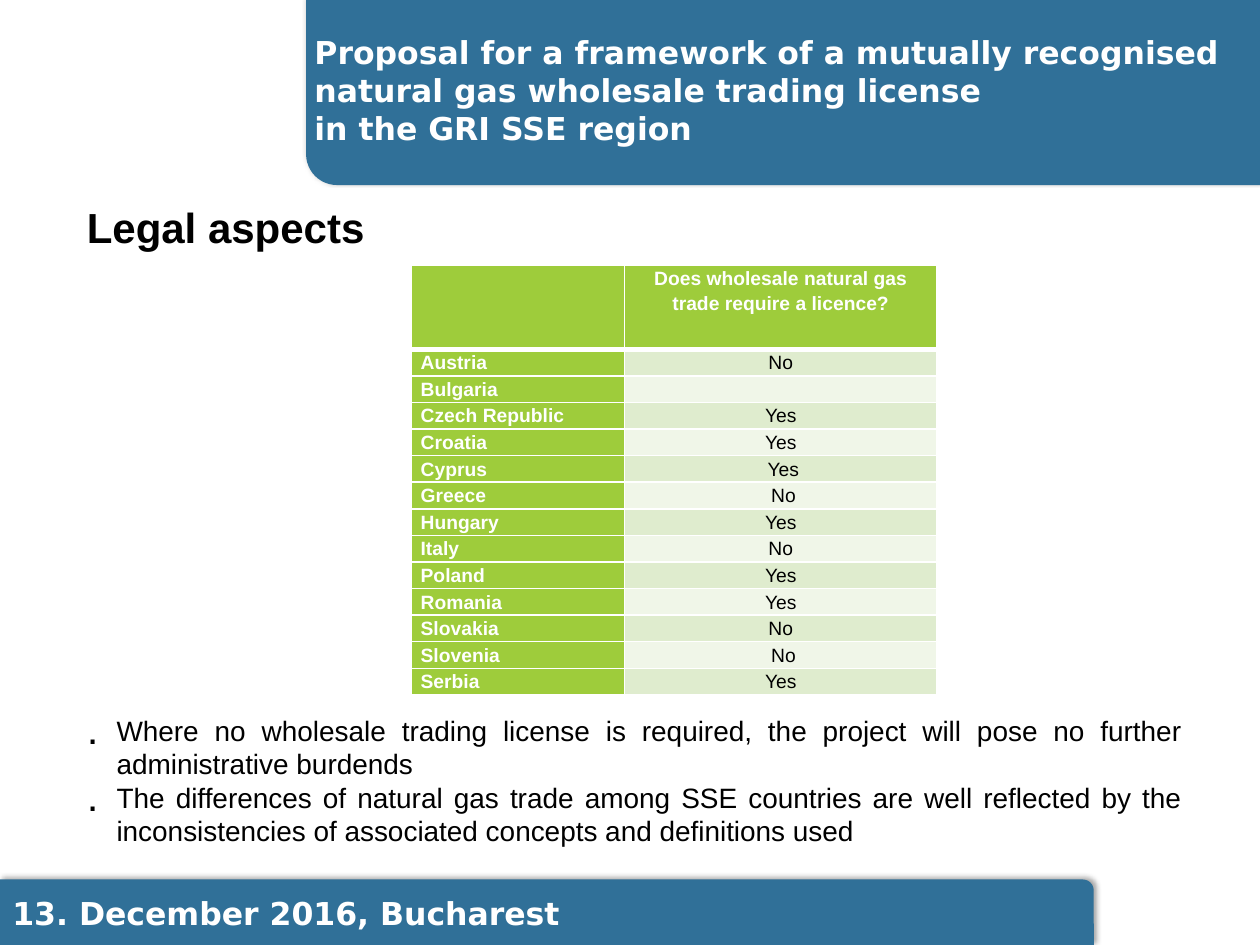
from lxml.etree import SubElement as Sub
from pptx import Presentation as Deck
from pptx.dml.color import RGBColor as Rgb
from pptx.enum.shapes import MSO_SHAPE as Kind
from pptx.enum.text import PP_ALIGN as Align
from pptx.oxml.ns import qn
from pptx.util import Cm, Pt

BLUE, GREEN, WHITE, BLACK = "307098", "9ECC3B", "FFFFFF", "000000"
TINTS = ["DFECCE", "F0F6E8"]
BANNER = dict(name="DejaVu Sans", size=Pt(18), bold=True)
HEADING = dict(name="Arial", size=Pt(24), bold=True)
BODY = dict(name="Arial", size=Pt(16), bold=False)
LABEL = dict(name="Arial", size=Pt(11), bold=True)
VALUE = dict(LABEL, bold=False)

ROWS = [
    ("", "Does wholesale natural gas trade require a licence?"),
    ("Austria", "No"),
    ("Bulgaria", ""),
    ("Czech Republic", "Yes"),
    ("Croatia", "Yes"),
    ("Cyprus", " Yes"),
    ("Greece", " No"),
    ("Hungary", "Yes"),
    ("Italy", "No"),
    ("Poland", "Yes"),
    ("Romania", "Yes"),
    ("Slovakia", "No"),
    ("Slovenia", " No"),
    ("Serbia", "Yes"),
]
POINTS = [
    "Where no wholesale trading license is required, the project will pose "
    "no further administrative burdends",
    "The differences of natural gas trade among SSE countries are well "
    "reflected by the inconsistencies of associated concepts and definitions used",
]


def color(code):
    return Rgb.from_string(code)


def place(box):
    return [Cm(n) for n in box]


def assign(item, values):
    for key, value in values.items():
        setattr(item, key, value)


def node(root, tag, **attrs):
    return Sub(root, qn(tag), **attrs)


def write(para, text, style, ink, **form):
    assign(para, form)
    if not text:
        node(para._p, "a:endParaRPr", sz=str(int(style["size"].pt * 100)))
        return
    para.text = text
    for run in para.runs:
        assign(run.font, style)
        run.font.color.rgb = color(ink)


def add_text(slide, box):
    frame = slide.shapes.add_textbox(*place(box)).text_frame
    frame.word_wrap = True
    return frame


def add_band(slide, box, turn=0):
    band = slide.shapes.add_shape(Kind.ROUND_1_RECTANGLE, *place(box))
    band.rotation = turn
    band.fill.solid()
    band.fill.fore_color.rgb = color(BLUE)
    band.line.fill.background()
    band.shadow.inherit = False
    glow = node(band._element.spPr.find(qn("a:effectLst")), "a:outerShdw",
                blurRad=str(Pt(3.1)), dist=str(Pt(1.8)), dir=str(306 * 60000),
                algn="ctr", rotWithShape="0")
    node(node(glow, "a:srgbClr", val=BLACK), "a:alpha", val="35000")


def add_header(slide, box):
    left, top, width, height = box
    add_band(slide, box, 180)
    frame = add_text(slide, (left - 0.08, top + 0.53, width - 0.23, height - 1.5))
    write(frame.paragraphs[0],
          "Proposal for a framework of a mutually recognised natural gas "
          "wholesale trading license\vin the GRI SSE region",
          BANNER, WHITE, line_spacing=Pt(21.7))


def add_footer(slide, box):
    left, top, width, height = box
    add_band(slide, box)
    frame = add_text(slide, (left, top + 0.17, width - 0.15, height - 0.3))
    write(frame.paragraphs[0], "13. December 2016, Bucharest", BANNER, WHITE)


def add_bullet(para):
    props = para._p.get_or_add_pPr()
    assign_indent = dict(marL=str(Cm(0.6)), indent=str(-Cm(0.6)))
    for key, value in assign_indent.items():
        props.set(key, value)
    node(node(props, "a:buClr"), "a:srgbClr", val=BLACK)
    node(props, "a:buSzPct", val="150000")
    node(props, "a:buFont", typeface="Arial")
    node(props, "a:buChar", char=".")


def add_body(slide, box):
    left, top, width, height = box
    head = add_text(slide, (left, top, width, 1.2))
    write(head.paragraphs[0], "Legal aspects", HEADING, BLACK)
    add_grid(slide, (left + 6.8, top + 1.4, 10.59, 8.59))
    frame = add_text(slide, (left, top + 10.33, width, height - 10.33))
    for i, text in enumerate(POINTS):
        para = frame.add_paragraph() if i else frame.paragraphs[0]
        add_bullet(para)
        write(para, text, BODY, BLACK, alignment=Align.JUSTIFY, line_spacing=Pt(19))


def add_edges(cell, base):
    props = cell._tc.get_or_add_tcPr()
    for side in "LRTB":
        edge = node(props, f"a:ln{side}", w=str(Pt(base if side == "B" else 1)))
        node(node(edge, "a:solidFill"), "a:srgbClr", val=WHITE)


def add_grid(slide, box):
    grid = slide.shapes.add_table(len(ROWS), 2, *place(box)).table
    grid.first_row = grid.horz_banding = False
    for col, width in zip(grid.columns, (4.29, 6.3)):
        col.width = Cm(width)
    for r, row in enumerate(ROWS):
        grid.rows[r].height = Cm(0.53 if r else 1.7)
        for c, text in enumerate(row):
            cell = grid.cell(r, c)
            plain = r > 0 and c > 0
            add_edges(cell, 1 if r else 3)
            assign(cell, dict(margin_left=Cm(0.18), margin_right=Cm(0.18),
                              margin_top=0, margin_bottom=0))
            cell.fill.solid()
            cell.fill.fore_color.rgb = color(TINTS[(r - 1) % 2] if plain else GREEN)
            write(cell.text_frame.paragraphs[0], text,
                  VALUE if plain else LABEL, BLACK if plain else WHITE,
                  alignment=Align.CENTER if c else Align.LEFT, line_spacing=1.15)


def main():
    deck = Deck()
    deck.slide_width, deck.slide_height = Cm(25.4), Cm(19.05)
    slide = deck.slides.add_slide(deck.slide_layouts[6])
    add_footer(slide, (0, 17.73, 22.05, 1.32))
    add_header(slide, (6.17, 0, 19.23, 3.73))
    add_body(slide, (1.5, 3.94, 22.58, 13.59))
    deck.save("out.pptx")


if __name__ == "__main__":
    main()
